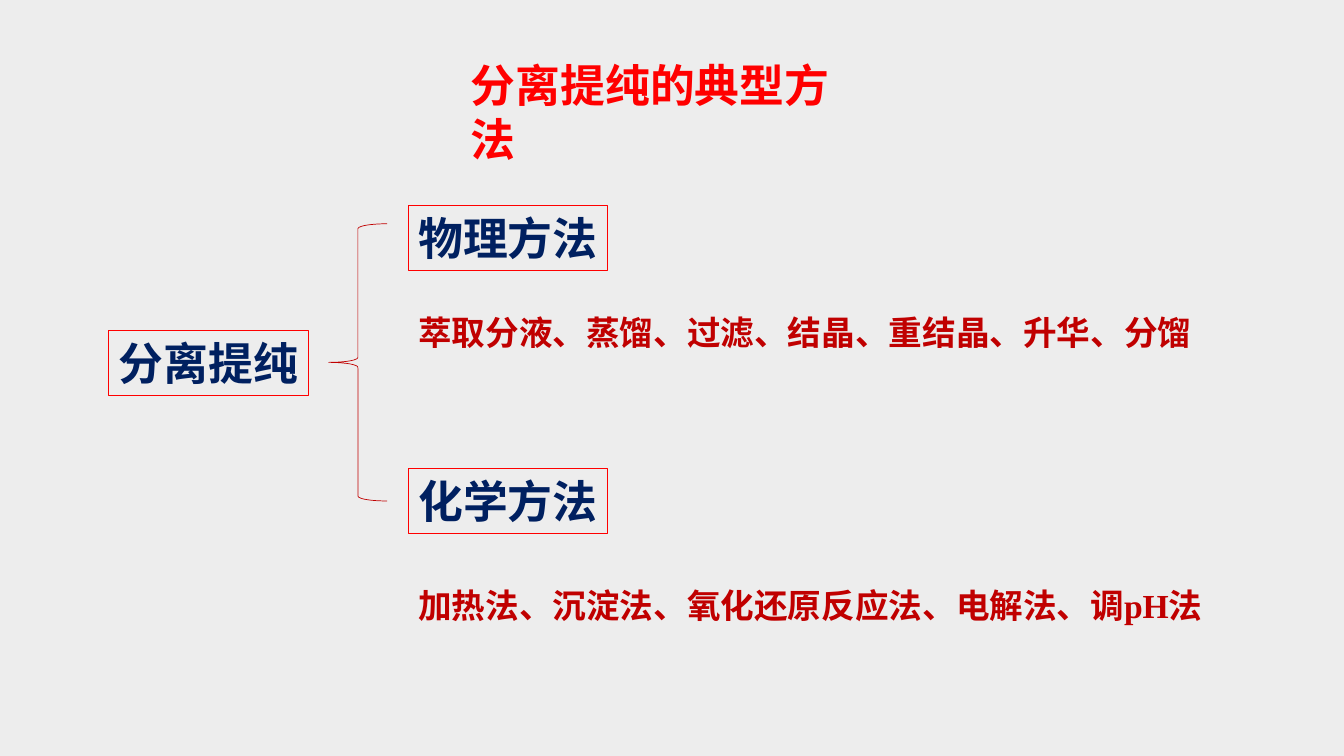
from dataclasses import dataclass

from lxml import etree
from pptx import Presentation
from pptx.dml.color import RGBColor as RGB
from pptx.enum.shapes import MSO_SHAPE as Shape
from pptx.enum.text import MSO_ANCHOR as Anchor, MSO_AUTO_SIZE as AutoSize, PP_ALIGN as Align
from pptx.oxml.ns import qn
from pptx.util import Inches, Pt


@dataclass(frozen=True)
class Theme:
    background: RGB = RGB.from_string("EDEDED")
    red: RGB = RGB.from_string("FF0000")
    dark_red: RGB = RGB.from_string("C00000")
    navy: RGB = RGB.from_string("002060")
    heading: int = 32
    body: int = 24
    cjk: str = "Noto Sans CJK SC"
    latin: str = "Times New Roman"


theme = Theme()


def write(sp, text, size, color, latin, wrap=True):
    """Fill a shape with bold, left-aligned text; East Asian glyphs use the CJK face."""
    tf = sp.text_frame
    tf.text = text
    tf.word_wrap = wrap
    tf.auto_size = AutoSize.NONE
    tf.vertical_anchor = Anchor.TOP
    p = tf.paragraphs[0]
    p.alignment = Align.LEFT
    for r in p.runs:
        r.font.size = Pt(size)
        r.font.bold = True
        r.font.color.rgb = color
        r.font.name = latin
        etree.SubElement(r.font._element, qn("a:ea"), typeface=theme.cjk)


def outline(kind, left, top, width, height, color, weight):
    sp = slide.shapes.add_shape(kind, Inches(left), Inches(top), Inches(width), Inches(height))
    sp.shadow.inherit = False
    sp.fill.background()
    sp.line.color.rgb = color
    sp.line.width = Pt(weight)
    return sp


prs = Presentation()
prs.slide_width, prs.slide_height = Inches(13.33), Inches(7.5)
slide = prs.slides.add_slide(prs.slide_layouts[5])
slide.background.fill.solid()
slide.background.fill.fore_color.rgb = theme.background

# Title
title = slide.shapes.title
title.left, title.top, title.width, title.height = map(Inches, (4.57, 0.52, 4.19, 0.64))
write(title, "分离提纯的典型方法", theme.heading, theme.red, theme.cjk)

# Root and the two branches
root_left, branch_left = 1.08, 4.05
box_width, box_height = 1.98, 0.64
boxes = [
    ("分离提纯", root_left, 3.28),
    ("物理方法", branch_left, 2.04),
    ("化学方法", branch_left, 4.65),
]
for text, left, top in boxes:
    sp = outline(Shape.RECTANGLE, left, top, box_width, box_height, theme.red, 0.75)
    write(sp, text, theme.heading, theme.navy, theme.cjk, wrap=False)

outline(Shape.LEFT_BRACE, 3.26, 2.22, 0.58, 2.75, theme.dark_red, 0.5)

# Methods under each branch
methods = [
    ("萃取分液、蒸馏、过滤、结晶、重结晶、升华、分馏", 3.05),
    ("加热法、沉淀法、氧化还原反应法、电解法、调pH法", 5.75),
]
for text, top in methods:
    sp = slide.shapes.add_textbox(Inches(branch_left), Inches(top), Inches(7.98), Inches(0.5))
    write(sp, text, theme.body, theme.dark_red, theme.latin)

prs.save("out.pptx")
